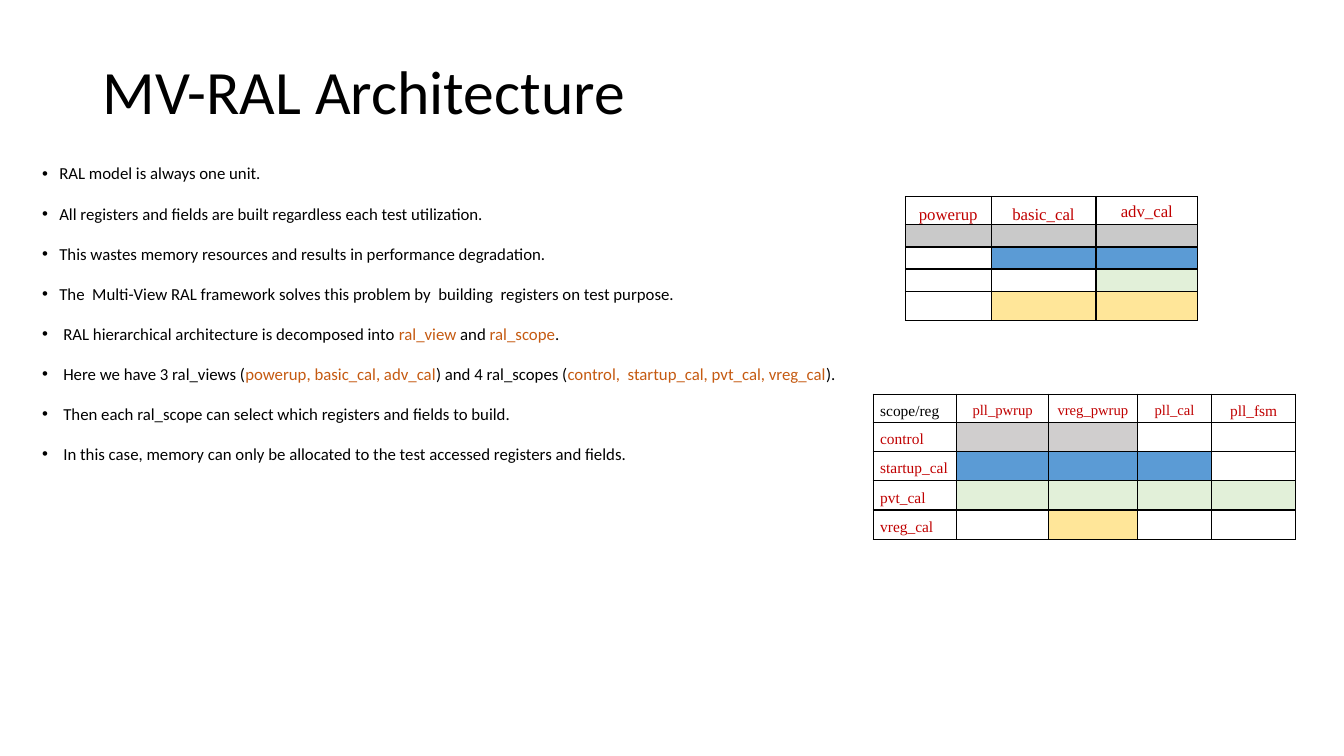
from lxml.etree import SubElement
from pptx import Presentation
from pptx.dml.color import RGBColor
from pptx.enum.text import MSO_ANCHOR, MSO_AUTO_SIZE, PP_ALIGN
from pptx.oxml.ns import qn
from pptx.util import Inches, Pt

BLACK, RED, ORANGE, WHITE = "000000", "C00000", "C55A11", "FFFFFF"
GREY, SILVER, BLUE, GREEN, YELLOW = "C9C9C9", "D0CECE", "5B9BD5", "E2F0D9", "FFE699"


def write(paragraph, text, color, size, face):
    run = paragraph.add_run()
    run.text = text
    for key, value in {"size": Pt(size), "name": face, "bold": False}.items():
        setattr(run.font, key, value)
    run.font.color.rgb = RGBColor.from_string(color)


def color_cell(cell, color):
    cell_format = {"margin_left": Inches(0.07), "margin_right": Inches(0.07),
                   "margin_top": 0, "margin_bottom": 0}
    for key, value in cell_format.items():
        setattr(cell, key, value)
    properties = cell._tc.get_or_add_tcPr()
    for side in ("a:lnL", "a:lnR", "a:lnT", "a:lnB"):
        border = SubElement(properties, qn(side), w=str(Pt(1)))
        SubElement(SubElement(border, qn("a:solidFill")), qn("a:srgbClr"), val=BLACK)
    cell.fill.solid()
    cell.fill.fore_color.rgb = RGBColor.from_string(color)


presentation = Presentation()
presentation.slide_width = Inches(13.33)
presentation.slide_height = Inches(7.5)
slide = presentation.slides.add_slide(presentation.slide_layouts[5])

title = slide.shapes.title
title_place = {"left": 0.92, "top": 0.4, "width": 11.5, "height": 1.08}
for key, value in title_place.items():
    setattr(title, key, Inches(value))
title.text_frame.vertical_anchor = MSO_ANCHOR.MIDDLE
title.text_frame.auto_size = MSO_AUTO_SIZE.NONE
heading = title.text_frame.paragraphs[0]
heading.alignment = PP_ALIGN.LEFT
heading.line_spacing = 0.9
write(heading, "MV-RAL Architecture", BLACK, 44, "Calibri")

views = ["powerup", "basic_cal", "adv_cal"]
registers = ["scope/reg", "pll_pwrup", "vreg_pwrup", "pll_cal", "pll_fsm"]
scopes = ["control", "startup_cal", "pvt_cal", "vreg_cal"]
tables = [
    {"place": (8.98, 1.95), "columns": [0.85, 1.04, 1.01],
     "rows": [0.28, 0.22, 0.22, 0.22, 0.29], "anchor": MSO_ANCHOR.MIDDLE,
     "texts": [views] + [[""] * 3] * 4, "sizes": [12] * 3, "spacings": [1.5, 1.5, 1.15],
     "fills": [[WHITE] * 3, [GREY] * 3, [WHITE, BLUE, BLUE],
               [WHITE, WHITE, GREEN], [WHITE, YELLOW, YELLOW]]},
    {"place": (8.66, 3.91), "columns": [0.83, 0.91, 0.88, 0.74, 0.83],
     "rows": [0.28] + [0.29] * 4, "anchor": MSO_ANCHOR.TOP,
     "texts": [registers] + [[scope] + [""] * 4 for scope in scopes],
     "sizes": [11, 10.5, 10.5, 10.5, 11], "spacings": [1.5] * 5,
     "fills": [[WHITE] * 5, [WHITE, SILVER, SILVER, WHITE, WHITE],
               [WHITE, BLUE, BLUE, BLUE, WHITE], [WHITE] + [GREEN] * 4,
               [WHITE, WHITE, YELLOW, WHITE, WHITE]]},
]
for plan in tables:
    left, top = plan["place"]
    grid = slide.shapes.add_table(
        len(plan["rows"]), len(plan["columns"]), Inches(left), Inches(top),
        Inches(sum(plan["columns"])), Inches(sum(plan["rows"]))).table
    grid.first_row = grid.horz_banding = False
    for column, width in zip(grid.columns, plan["columns"]):
        column.width = Inches(width)
    for r, height in enumerate(plan["rows"]):
        grid.rows[r].height = Inches(height)
        for c, text in enumerate(plan["texts"][r]):
            cell = grid.cell(r, c)
            color_cell(cell, plan["fills"][r][c])
            cell.vertical_anchor = plan["anchor"]
            label = cell.text_frame.paragraphs[0]
            if text:
                label.line_spacing = plan["spacings"][c]
                label.alignment = PP_ALIGN.LEFT if text in ["scope/reg"] + scopes else PP_ALIGN.CENTER
                write(label, text, BLACK if text == "scope/reg" else RED,
                      plan["sizes"][c], "Times New Roman")
            else:
                SubElement(label._p, qn("a:endParaRPr"), sz="1000")

points = [
    (0.17, ["RAL model is always one unit."]),
    (0.17, ["All registers and fields are built regardless each test utilization."]),
    (0.17, ["This wastes memory resources and results in performance degradation."]),
    (0.17, ["The  Multi-View RAL framework solves this problem by  building  registers on test purpose."]),
    (0.21, ["RAL hierarchical architecture is decomposed into ", "ral_view ", "and ", "ral_scope", "."]),
    (0.21, ["Here we have 3 ral_views (", "powerup, basic_cal, adv_cal", ") and 4 ral_scopes (",
            "control,  startup_cal, pvt_cal, vreg_cal", ")."]),
    (0.21, ["Then each ral_scope can select which registers and fields to build."]),
    (0.21, ["In this case, memory can only be allocated to the test accessed registers and fields."]),
]
body = slide.shapes.add_textbox(Inches(0.32), Inches(1.57), Inches(8.16), Inches(3.94)).text_frame
body.word_wrap = True
for number, (indent, parts) in enumerate(points):
    point = body.add_paragraph() if number else body.paragraphs[0]
    if number:
        point.space_before = Pt(14.2)
    properties = point._p.get_or_add_pPr()
    properties.set("marL", str(Inches(indent)))
    properties.set("indent", str(-Inches(indent)))
    SubElement(properties, qn("a:buFont"), typeface="Arial")
    SubElement(properties, qn("a:buChar"), char="•")
    for order, part in enumerate(parts):
        write(point, part, ORANGE if order % 2 else BLACK, 12, "Calibri")

presentation.save("out.pptx")
